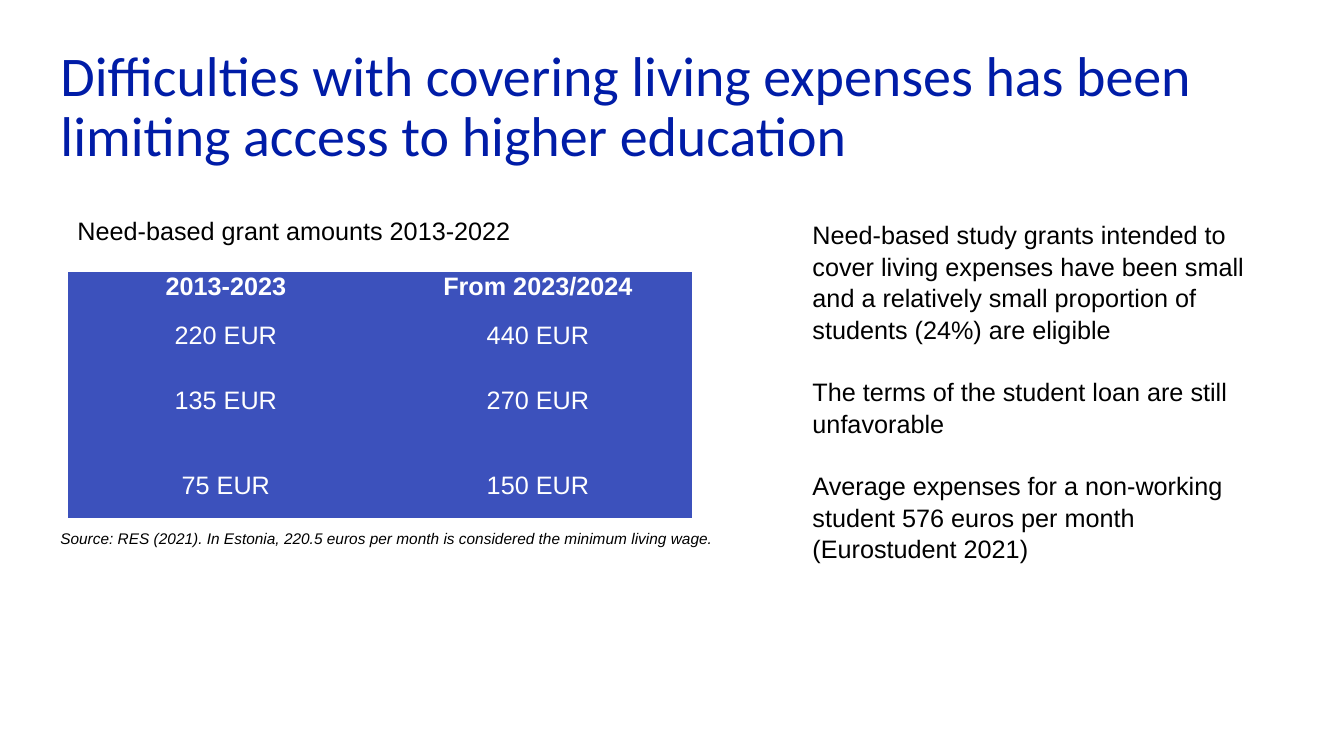
"""Build a slide on grants and living expenses of students."""
from pptx import Presentation
from pptx import util as u
from pptx.dml.color import RGBColor
from pptx.enum import text

TITLE_BLUE = RGBColor(0x00, 0x1C, 0xA7)
TABLE_BLUE = RGBColor(0x3C, 0x51, 0xBC)
WHITE = RGBColor(0xFF, 0xFF, 0xFF)
BLACK = RGBColor(0x00, 0x00, 0x00)
PLAIN_TABLE_STYLE = "{2D5ABB26-0587-4C30-8999-92F81FD0307C}"
LEFT, CENTER = text.PP_ALIGN.LEFT, text.PP_ALIGN.CENTER
TOP, MIDDLE = text.MSO_ANCHOR.TOP, text.MSO_ANCHOR.MIDDLE

TITLE = "Difficulties with covering living expenses has been limiting access to higher education"
CAPTION = "Need-based grant amounts 2013-2022"
SOURCE = "Source: RES (2021). In Estonia, 220.5 euros per month is considered the minimum living wage."
GRANTS = [
    ("2013-2023", "From 2023/2024"),
    ("220 EUR", "440 EUR"),
    ("135 EUR", "270 EUR"),
    ("75 EUR", "150 EUR"),
]
FINDINGS = [
    "Need-based study grants intended to cover living expenses have been small "
    "and a relatively small proportion of students (24%) are eligible",
    "The terms of the student loan are still unfavorable",
    "Average expenses for a non-working student 576 euros per month (Eurostudent 2021)",
]


def apply(target, values):
    for name, value in values.items():
        setattr(target, name, value)


class SlideBuilder:
    def __init__(self, deck):
        self.page = deck.slides.add_slide(deck.slide_layouts[5])
        self.font = {"name": "Arial", "size": u.Pt(18), "bold": False}

    def add_lines(self, frame, lines, color, font=None, layout=None, gap=0):
        for index, line in enumerate(lines):
            para = frame.paragraphs[0] if index == 0 else frame.add_paragraph()
            if index and gap:
                para.space_before = u.Pt(gap)
            apply(para, {"alignment": LEFT, **(layout or {})})
            span = para.add_run()
            span.text = line
            apply(span.font, {**self.font, **(font or {})})
            span.font.color.rgb = color

    def title(self, line, left, top, width, height):
        box = self.page.shapes.title
        apply(box, {"left": u.Inches(left), "top": u.Inches(top),
                    "width": u.Inches(width), "height": u.Inches(height)})
        apply(box.text_frame, {"vertical_anchor": MIDDLE, "word_wrap": True,
                               "auto_size": text.MSO_AUTO_SIZE.NONE})
        self.add_lines(box.text_frame, [line], TITLE_BLUE,
                       {"name": "Calibri", "size": u.Pt(40)},
                       {"line_spacing": 0.9, "space_before": u.Pt(10)})

    def text_box(self, lines, left, top, width, height, wrap=True, anchor=TOP, **style):
        box = self.page.shapes.add_textbox(*map(u.Inches, (left, top, width, height)))
        apply(box.text_frame, {"word_wrap": wrap, "vertical_anchor": anchor,
                               "auto_size": text.MSO_AUTO_SIZE.SHAPE_TO_FIT_TEXT})
        self.add_lines(box.text_frame, lines, BLACK, **style)

    def table(self, rows, left, top, widths, heights):
        frame = self.page.shapes.add_table(
            len(rows), len(widths), *map(u.Inches, (left, top, sum(widths), sum(heights))))
        for style in frame.element.xpath(".//a:tableStyleId"):
            style.text = PLAIN_TABLE_STYLE
        table = frame.table
        for column, width in zip(table.columns, widths):
            column.width = u.Inches(width)
        for row_index, (row, height) in enumerate(zip(rows, heights)):
            table.rows[row_index].height = u.Inches(height)
            for column_index, value in enumerate(row):
                cell = table.cell(row_index, column_index)
                apply(cell, {"margin_left": u.Inches(0.07), "margin_right": u.Inches(0.07),
                             "margin_top": 0, "margin_bottom": 0,
                             "vertical_anchor": MIDDLE if row_index == len(rows) - 1 else TOP})
                cell.fill.solid()
                cell.fill.fore_color.rgb = TABLE_BLUE
                self.add_lines(cell.text_frame, [value], WHITE, {"bold": row_index == 0},
                               {"alignment": CENTER})


def main():
    deck = Presentation()
    deck.slide_width, deck.slide_height = u.Inches(13.33), u.Inches(7.5)
    slide = SlideBuilder(deck)
    slide.title(TITLE, 0.5, 0.43, 11.42, 1.29)
    slide.table(GRANTS, 0.67, 2.7, [3.14, 3.05], [0.49] + [0.65] * 3)
    slide.text_box([SOURCE], 0.5, 5.2, 8.1, 0.29, anchor=MIDDLE,
                   font={"size": u.Pt(11), "italic": True})
    slide.text_box(FINDINGS, 7.96, 2.11, 4.82, 3.43, layout={"line_spacing": 1.05}, gap=21.6)
    slide.text_box([CAPTION], 0.67, 2.09, 4.66, 0.4, wrap=False)
    deck.save("out.pptx")


if __name__ == "__main__":
    main()
